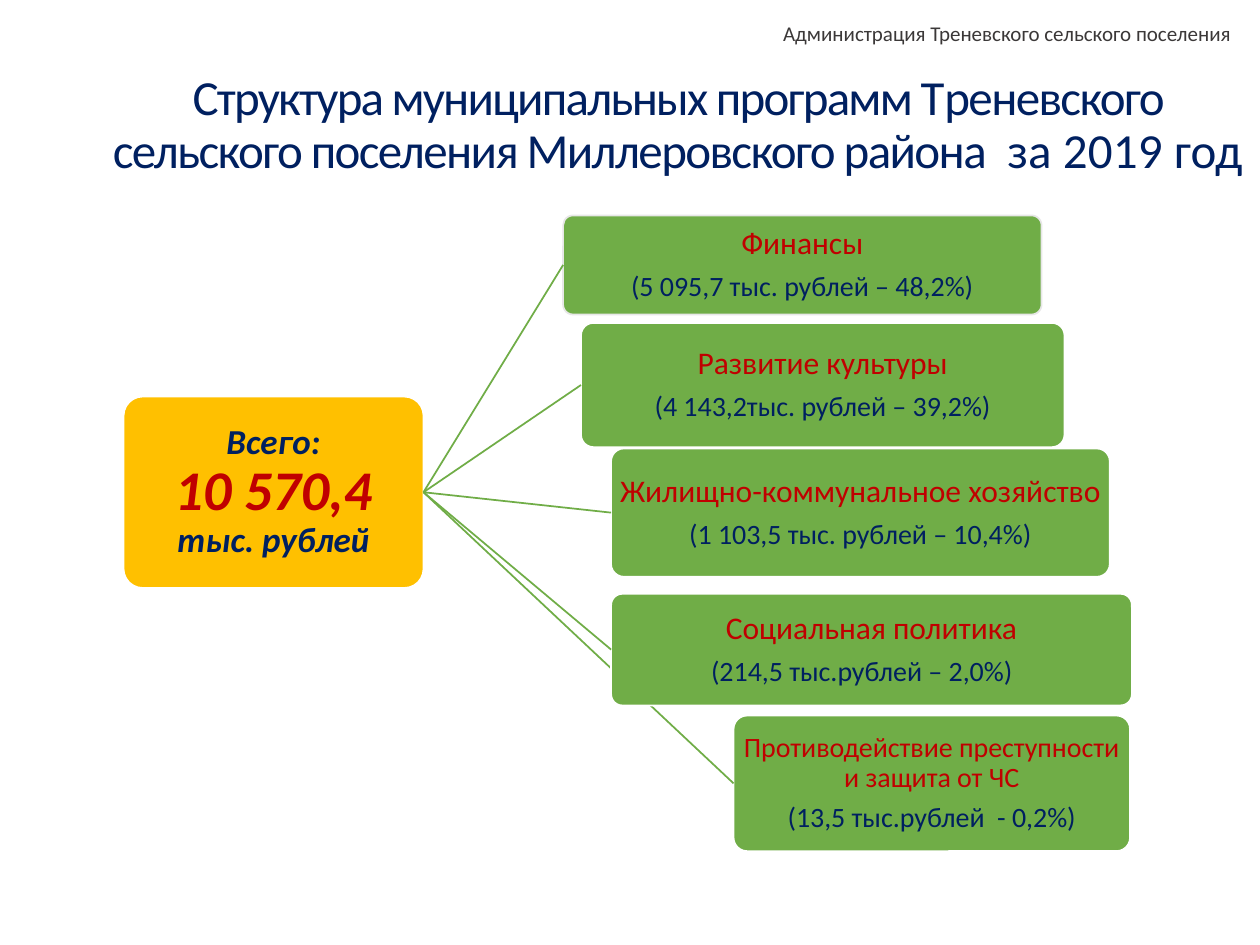
from lxml import etree
from pptx import Presentation
from pptx.dml.color import RGBColor
from pptx.enum.shapes import MSO_CONNECTOR as CONN, MSO_SHAPE as SHAPE
from pptx.enum.text import MSO_ANCHOR as ANCHOR, MSO_AUTO_SIZE as AUTO, PP_ALIGN as ALIGN
from pptx.oxml.ns import qn
from pptx.util import Pt

NAVY = RGBColor(0x00, 0x20, 0x60)
RED = RGBColor(0xC0, 0x00, 0x00)
GREEN = RGBColor(0x70, 0xAD, 0x47)
AMBER = RGBColor(0xFF, 0xC0, 0x00)
WHITE = RGBColor(0xFF, 0xFF, 0xFF)
PALE = RGBColor(0xE7, 0xE7, 0xE7)
GREY = RGBColor(0x3B, 0x38, 0x38)

HEADER = "Администрация Треневского сельского поселения"
TITLE = [
    ("Структура муниципальных программ Т", -1),
    ("реневского сельского поселения Миллеровского района ", -0.9),
    (" за 2019 год", 0.1),
]
TOTAL = [("Всего:", 20, NAVY), ("10 570,4", 32, RED), ("тыс. рублей", 20, NAVY)]
TOTAL_BOX = (70.6, 226.6, 171.4, 109.4)
PROGRAMS = [
    ("Финансы", "(5 095,7 тыс. рублей – 48,2%)", 18, PALE, 0,
     (321.8, 123.1, 273.4, 56.6)),
    ("Противодействие преступности и защита от ЧС", "(13,5 тыс.рублей  - 0,2%)", 16, WHITE, 0,
     (419.2, 408.9, 226.6, 77.5)),
    ("Развитие культуры", "(4 143,2тыс. рублей – 39,2%)", 18, WHITE, 0,
     (332, 184.5, 276.3, 71)),
    ("Жилищно-коммунальное хозяйство", "(1 103,5 тыс. рублей – 10,4%)", 18, WHITE, 0,
     (349.2, 256.3, 285, 73.3)),
    ("Социальная политика", "(214,5 тыс.рублей – 2,0%)", 18, WHITE, 11,
     (349.2, 339.3, 297.6, 63.8)),
]


def add_text(p, text, size, color, align=ALIGN.CENTER, bold=False, italic=False,
             spacing=None, line=0.9, after=0, right=0):
    p.alignment = align
    p.line_spacing = line
    p.space_before = Pt(0)
    p.space_after = Pt(after)
    if right:
        p._p.get_or_add_pPr().set("marR", str(Pt(right)))
    r = p.add_run()
    r.text = text
    r.font.name = "Calibri"
    r.font.size = Pt(size)
    r.font.bold = bold
    r.font.italic = italic
    r.font.color.rgb = color
    if spacing is not None:
        r._r.get_or_add_rPr().set("spc", str(round(spacing * 100)))


def add_box(shapes, box, fill, line):
    sp = shapes.add_shape(SHAPE.ROUNDED_RECTANGLE, *map(Pt, box))
    sp.adjustments[0] = 0.1
    sp.shadow.inherit = False
    sp.fill.solid()
    sp.fill.fore_color.rgb = fill
    sp.line.color.rgb = line
    sp.line.width = Pt(1)
    tf = sp.text_frame
    tf.word_wrap = True
    tf.vertical_anchor = ANCHOR.MIDDLE
    tf.margin_left = tf.margin_right = tf.margin_top = tf.margin_bottom = Pt(0.8)
    return sp


def paragraphs(tf, count):
    return [tf.paragraphs[0]] + [tf.add_paragraph() for _ in range(count - 1)]


def link(shapes, start, end):
    cn = shapes.add_connector(CONN.STRAIGHT, 0, 0, 0, 0)
    cn.begin_connect(start, 3)
    cn.end_connect(end, 1)
    cn.line.color.rgb = GREEN
    cn.line.width = Pt(1)
    etree.SubElement(cn._element.spPr, qn("a:effectLst"))


prs = Presentation()
prs.slide_width, prs.slide_height = Pt(720), Pt(540)
slide = prs.slides.add_slide(prs.slide_layouts[5])
shapes = slide.shapes

title = shapes.title
title.left, title.top, title.width, title.height = map(Pt, (54.7, 33.8, 665.3, 77))
tf = title.text_frame
tf.word_wrap = True
tf.auto_size = AUTO.NONE
tf.vertical_anchor = ANCHOR.MIDDLE
for text, spacing in TITLE:
    add_text(tf.paragraphs[0], text, 28, NAVY, spacing=spacing)

header = shapes.add_textbox(*map(Pt, (254.9, 10.1, 455.8, 17.3)))
tf = header.text_frame
tf.word_wrap = True
tf.vertical_anchor = ANCHOR.MIDDLE
add_text(tf.paragraphs[0], HEADER, 12, GREY, align=ALIGN.RIGHT, line=1.0)

total = add_box(shapes, TOTAL_BOX, AMBER, WHITE)
for p, (text, size, color) in zip(paragraphs(total.text_frame, len(TOTAL)), TOTAL):
    add_text(p, text, size, color, bold=True, italic=True)

for name, amount, size, outline, right, box in PROGRAMS:
    sp = add_box(shapes, box, GREEN, outline)
    link(shapes, total, sp)
    first, second = paragraphs(sp.text_frame, 2)
    add_text(first, name, size, RED, after=0.35 * size)
    add_text(second, amount, 16, NAVY, after=0.35 * 16, right=right)

prs.save("out.pptx")
